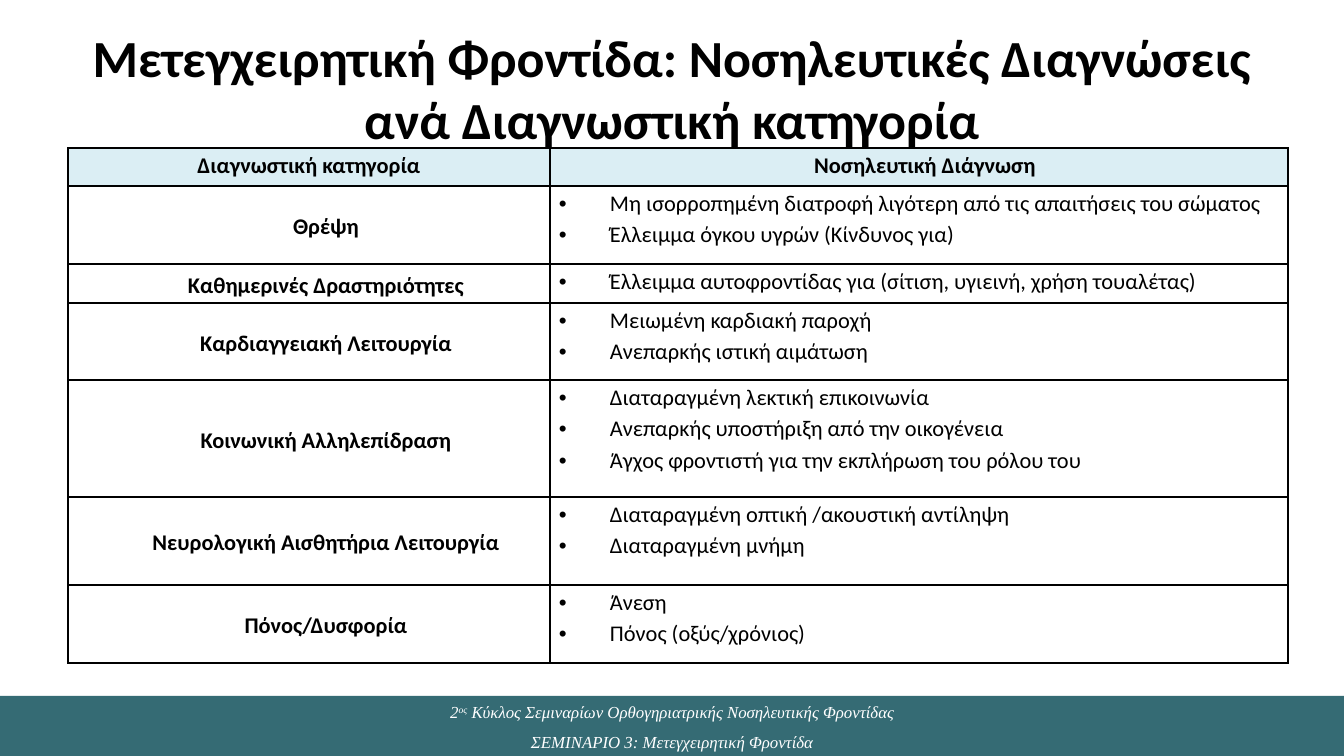
"""Build the slide on nursing diagnoses by diagnostic category."""
from lxml.etree import SubElement as Sub
from pptx import Presentation
from pptx.dml.color import RGBColor
from pptx.enum.shapes import MSO_SHAPE as Shape
from pptx.enum.text import MSO_ANCHOR as Anchor, PP_ALIGN as Align
from pptx.oxml.ns import qn
from pptx.util import Pt

SCALE = 9144000 / 1344


def px(*nums):
    return [round(n * SCALE) for n in nums]


def write(frame, text, size=12, font="Calibri", color="000000", bold=False,
          italic=False, align=Align.CENTER, space=1.0, left=0, hang=0, bullet=None):
    for i, line in enumerate(text.split("\n")):
        para = frame.paragraphs[0] if i == 0 else frame.add_paragraph()
        para.alignment = align
        props = para._p.get_or_add_pPr()
        props.set("marL", str(px(left)[0]))
        props.set("indent", str(px(-hang)[0]))
        if bullet:
            Sub(props, qn("a:buFont"), typeface="Arial")
            Sub(props, qn("a:buChar"), char=bullet)
        para.line_spacing = space
        for j, part in enumerate(line.split("^")):
            run = para.add_run()
            run.text = part
            face = run.font
            face.size, face.name = Pt(size), font
            face.bold, face.italic = bold, italic
            face.color.rgb = RGBColor.from_string(color)
            if j % 2:
                run._r.get_or_add_rPr().set("baseline", "30000")


deck = Presentation()
deck.slide_width, deck.slide_height = px(1344, 756)
slide = deck.slides.add_slide(deck.slide_layouts[6])
shapes = slide.shapes

title = shapes.add_textbox(*px(67, 31, 1210, 126)).text_frame
title.word_wrap = True
title.vertical_anchor = Anchor.MIDDLE
title.margin_bottom = px(19)[0]
write(title, "Μετεγχειρητική Φροντίδα: Νοσηλευτικές Διαγνώσεις ανά Διαγνωστική κατηγορία",
      size=27.9, bold=True)

band = shapes.add_shape(Shape.RECTANGLE, *px(0, 696, 1344, 60))
band.shadow.inherit = False
band.fill.solid()
band.fill.fore_color.rgb = RGBColor.from_string("356B74")
band.line.fill.background()

foot = shapes.add_textbox(*px(70, 685, 1204, 75)).text_frame
foot.word_wrap = True
write(foot, "2^ος^ Κύκλος Σεμιναρίων Ορθογηριατρικής Νοσηλευτικής Φροντίδας\n"
      "ΣΕΜΙΝΑΡΙΟ 3: Μετεγχειρητική Φροντίδα",
      size=9, font="Times New Roman", color="FFFFFF", italic=True, space=1.5)

rows = [
    (38, "Διαγνωστική κατηγορία", "Νοσηλευτική Διάγνωση"),
    (78, "Θρέψη", "Μη ισορροπημένη διατροφή λιγότερη από τις απαιτήσεις του σώματος\n"
     "Έλλειμμα όγκου υγρών (Κίνδυνος για)"),
    (39, "Καθημερινές Δραστηριότητες",
     "Έλλειμμα αυτοφροντίδας για (σίτιση, υγιεινή, χρήση τουαλέτας)"),
    (77, "Καρδιαγγειακή Λειτουργία", "Μειωμένη καρδιακή παροχή\nΑνεπαρκής ιστική αιμάτωση"),
    (117, "Κοινωνική Αλληλεπίδραση", "Διαταραγμένη λεκτική επικοινωνία\n"
     "Ανεπαρκής υποστήριξη από την οικογένεια\n"
     "Άγχος φροντιστή για την εκπλήρωση του ρόλου του"),
    (88, "Νευρολογική Αισθητήρια Λειτουργία",
     "Διαταραγμένη οπτική /ακουστική αντίληψη\nΔιαταραγμένη μνήμη"),
    (78, "Πόνος/Δυσφορία", "Άνεση\nΠόνος (οξύς/χρόνιος)"),
]
high = sum(row[0] for row in rows)
table = shapes.add_table(len(rows), 2, *px(68, 148, 1220, high)).table
table.first_row = table.horz_banding = False
for col, width in zip(table.columns, px(482, 738)):
    col.width = width

for r, (tall, *texts) in enumerate(rows):
    table.rows[r].height = px(tall)[0]
    for c, text in enumerate(texts):
        cell = table.cell(r, c)
        cell.margin_left, cell.margin_right = px(9, 9)
        cell.margin_top = cell.margin_bottom = 0
        for side in ("lnL", "lnR", "lnT", "lnB"):
            edge = Sub(cell._tc.get_or_add_tcPr(), qn("a:" + side), w=str(Pt(1)))
            Sub(Sub(edge, qn("a:solidFill")), qn("a:srgbClr"), val="000000")
        if r == 0:
            cell.fill.solid()
            cell.fill.fore_color.rgb = RGBColor.from_string("DBEEF4")
            write(cell.text_frame, text, bold=True, space=1.15, left=12 * c)
        elif c == 0:
            cell.fill.background()
            cell.vertical_anchor = Anchor.MIDDLE
            write(cell.text_frame, text, bold=True, space=1.15, left=34)
        else:
            cell.fill.background()
            write(cell.text_frame, text, align=Align.JUSTIFY, space=1.15,
                  left=51, hang=51, bullet="•")

deck.save("out.pptx")
